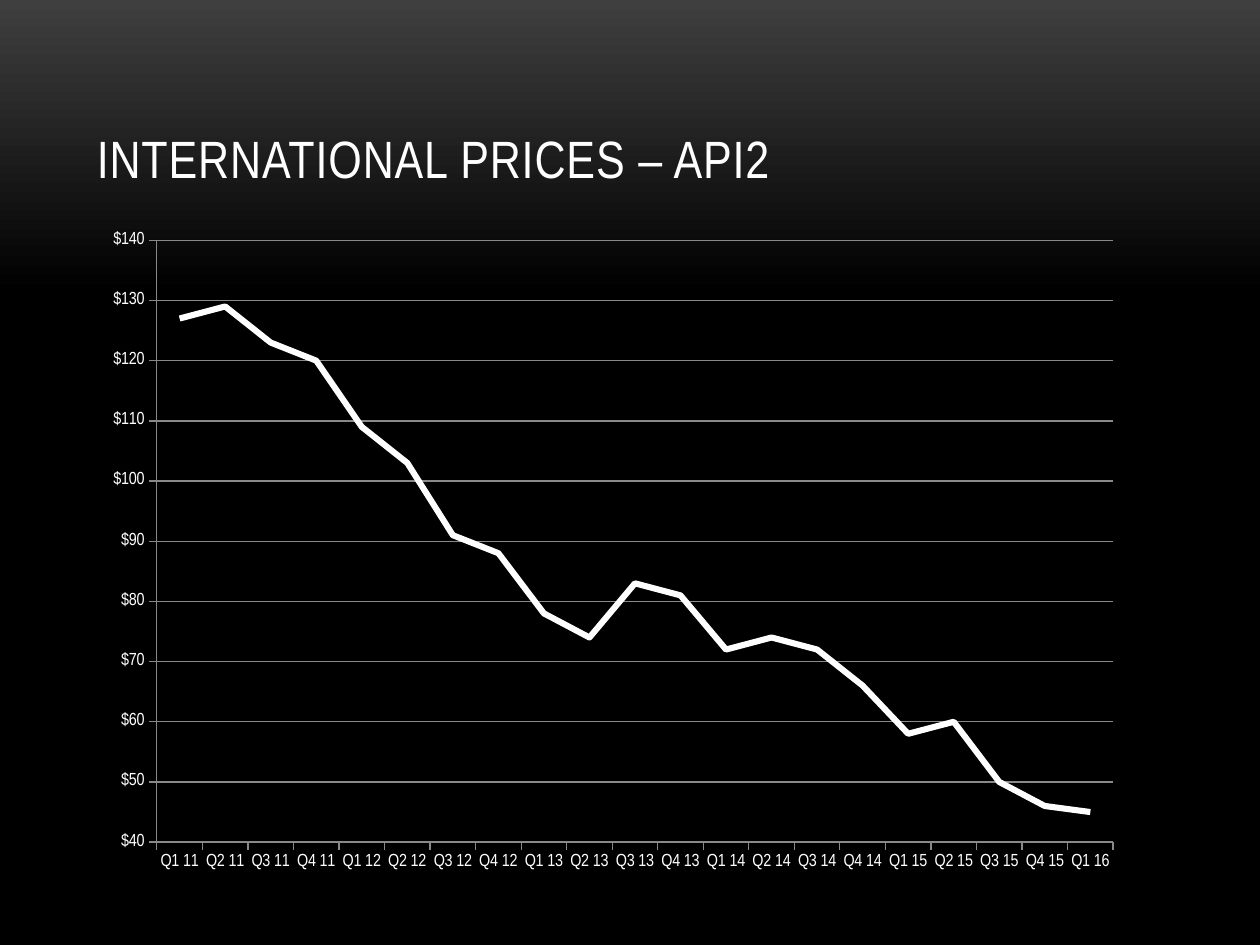
from copy import deepcopy

from lxml import etree
from pptx import Presentation
from pptx.chart.data import CategoryChartData
from pptx.dml.color import RGBColor
from pptx.enum.chart import XL_CHART_TYPE, XL_TICK_MARK
from pptx.enum.text import MSO_ANCHOR
from pptx.oxml.ns import qn
from pptx.util import Inches, Pt

COLORS = {"text": "FFFFFF", "line": "FFFFFF", "axis": "898989", "glow": "3F3F3F", "dark": "000000"}
FONT = "Arial Narrow"
PRICES = [127, 129, 123, 120, 109, 103, 91, 88, 78, 74, 83,
          81, 72, 74, 72, 66, 58, 60, 50, 46, 45]
QUARTERS = [f"Q{index % 4 + 1} {11 + index // 4}" for index in range(len(PRICES))]


def color(name):
    return RGBColor.from_string(COLORS[name])


def style_font(font, size):
    font.name = FONT
    font.size = Pt(size)
    font.bold = False
    font.color.rgb = color("text")


def paint_background(page):
    fill = page.background.fill
    fill.gradient()
    fill.gradient_angle = 270
    for stop, name, position in zip(fill.gradient_stops, ("glow", "dark"), (0, 0.31)):
        stop.color.rgb = color(name)
        stop.position = position
    stops = page.element.find(".//" + qn("a:gsLst"))
    last = deepcopy(stops[-1])
    last.set("pos", "100000")
    stops.append(last)


def add_title(page, left, top, width, height):
    box = page.shapes.add_textbox(left, top, width, height)
    frame = box.text_frame
    frame.word_wrap = True
    frame.vertical_anchor = MSO_ANCHOR.BOTTOM
    span = frame.paragraphs[0].add_run()
    span.text = "INTERNATIONAL PRICES – API2"
    style_font(span.font, 30)
    span.font._element.set("spc", "50")


def set_plot_area(chart, **fractions):
    plot_area = chart.element.find(".//" + qn("c:plotArea"))
    layout = plot_area.find(qn("c:layout"))
    if layout is None:
        layout = etree.Element(qn("c:layout"))
        plot_area.insert(0, layout)
    manual = etree.SubElement(layout, qn("c:manualLayout"))
    settings = {"layoutTarget": "inner", "xMode": "edge", "yMode": "edge", **fractions}
    for tag, value in settings.items():
        etree.SubElement(manual, qn("c:" + tag)).set("val", str(value))


def style_line(line, name, width):
    line.color.rgb = color(name)
    line.width = Pt(width)


def add_price_chart(page, left, top, width, height):
    data = CategoryChartData()
    data.categories = QUARTERS
    data.add_series("Series 1", PRICES)
    chart = page.shapes.add_chart(XL_CHART_TYPE.LINE, left, top, width, height, data).chart
    chart.has_title = False
    chart.has_legend = False
    style_font(chart.font, 10)
    set_plot_area(chart, x=0.06, y=0.03, w=0.92, h=0.91)

    plot = chart.plots[0]
    plot.vary_by_categories = False
    series = plot.series[0]
    series.smooth = False
    style_line(series.format.line, "line", 3.5)

    for axis in (chart.category_axis, chart.value_axis):
        axis.major_tick_mark = XL_TICK_MARK.OUTSIDE
        axis.minor_tick_mark = XL_TICK_MARK.NONE
        style_line(axis.format.line, "axis", 0.75)
        style_font(axis.tick_labels.font, 10)

    prices = chart.value_axis
    prices.minimum_scale = 40
    prices.maximum_scale = 140
    prices.major_unit = 10
    prices.has_major_gridlines = True
    style_line(prices.major_gridlines.format.line, "axis", 0.75)
    prices.tick_labels.number_format = '"$"#,##0'
    prices.tick_labels.number_format_is_linked = False


def main():
    deck = Presentation()
    deck.slide_width = Inches(10)
    deck.slide_height = Inches(7.5)
    page = deck.slides.add_slide(deck.slide_layouts[6])
    paint_background(page)
    add_title(page, Inches(0.67), Inches(0.3), Inches(8.67), Inches(1.25))
    add_price_chart(page, Inches(0.75), Inches(1.75), Inches(8.25), Inches(5.25))
    deck.save("out.pptx")


if __name__ == "__main__":
    main()
